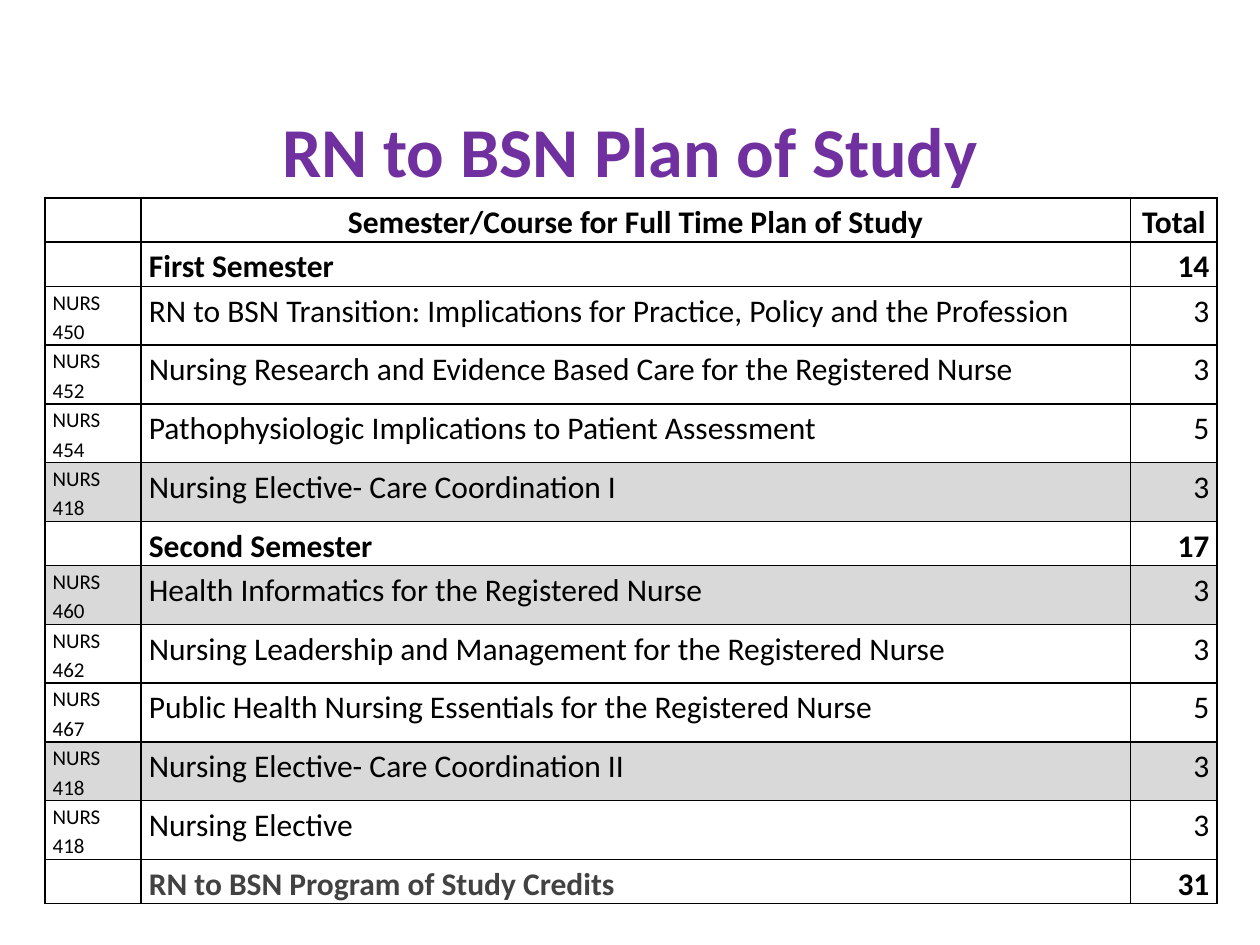
from lxml import etree
from pptx import Presentation
from pptx import util as u
from pptx.dml.color import RGBColor
from pptx.enum import text
from pptx.oxml.ns import qn

BLACK, GREY, SHADE, PURPLE = "000000", "424242", "D9D9D9", "7030A0"
LEFT, CENTER, RIGHT = text.PP_ALIGN.LEFT, text.PP_ALIGN.CENTER, text.PP_ALIGN.RIGHT
COLUMN_WIDTHS = (55, 565.5, 49.5)
HEADING_HEIGHT, COURSE_HEIGHT = 25.2, 33.6

HEADER = ("", "Semester/Course for Full Time Plan of Study", "Total")
PLAN = [
    ("", "First Semester", "14"),
    ("NURS 450", "RN to BSN Transition: Implications for Practice, Policy and the Profession", "3"),
    ("NURS 452", "Nursing Research and Evidence Based Care for the Registered Nurse", "3"),
    ("NURS 454", "Pathophysiologic Implications to Patient Assessment", "5"),
    ("NURS 418", "Nursing Elective- Care Coordination I", "3"),
    ("", "Second Semester", "17"),
    ("NURS 460", "Health Informatics for the Registered Nurse", "3"),
    ("NURS 462", "Nursing Leadership and Management for the Registered Nurse", "3"),
    ("NURS 467", "Public Health Nursing Essentials for the Registered Nurse", "5"),
    ("NURS 418", "Nursing Elective- Care Coordination II", "3"),
    ("NURS 418", "Nursing Elective", "3"),
    ("", "RN to BSN Program of Study Credits", "31"),
]
SHADED_ROWS = {5, 7, 10}


def rgb(value):
    return RGBColor.from_string(value)


def write(frame, content, size=18, color=BLACK, bold=False, align=LEFT, spacing=None):
    paragraph = frame.paragraphs[0]
    paragraph.alignment = align
    paragraph.line_spacing = spacing
    if content:
        run = paragraph.add_run()
        run.text = content
        run.font.name = "Calibri"
        run.font.size = u.Pt(size)
        run.font.bold = bold
        run.font.color.rgb = rgb(color)


def add_borders(cell, color=BLACK, width=1):
    """Draw all four sides; border lines must precede the cell's fill."""
    properties = cell._tc.get_or_add_tcPr()
    for position, side in enumerate(("a:lnL", "a:lnR", "a:lnT", "a:lnB")):
        line = etree.Element(qn(side), w=str(u.Pt(width)))
        fill = etree.SubElement(line, qn("a:solidFill"))
        etree.SubElement(fill, qn("a:srgbClr"), val=color)
        properties.insert(position, line)


def format_cell(cell, shaded):
    cell.margin_left = cell.margin_right = u.Pt(4.5)
    cell.margin_top = cell.margin_bottom = 0
    if shaded:
        cell.fill.solid()
        cell.fill.fore_color.rgb = rgb(SHADE)
    else:
        cell.fill.background()
    add_borders(cell)


def add_plan_table(slide):
    rows = [HEADER, *PLAN]
    heights = [COURSE_HEIGHT if code else HEADING_HEIGHT for code, *_ in rows]
    table = slide.shapes.add_table(
        len(rows), len(COLUMN_WIDTHS), u.Pt(25.6), u.Pt(113.2),
        u.Pt(sum(COLUMN_WIDTHS)), u.Pt(sum(heights))).table
    table.first_row = table.horz_banding = False
    for column, width in zip(table.columns, COLUMN_WIDTHS):
        column.width = u.Pt(width)

    for index, (course, height) in enumerate(zip(rows, heights)):
        table.rows[index].height = u.Pt(height)
        is_header, is_last = index == 0, index == len(rows) - 1
        aligns = (LEFT, CENTER, CENTER) if is_header else (LEFT, LEFT, RIGHT)
        for column, (content, align) in enumerate(zip(course, aligns)):
            cell = table.cell(index, column)
            format_cell(cell, index in SHADED_ROWS)
            write(cell.text_frame, content, size=12 if column == 0 else 18,
                  color=GREY if is_last and column == 1 else BLACK,
                  bold=not course[0], align=align, spacing=1.15)


def add_title(slide):
    title = slide.shapes.title
    title.left, title.top = u.Pt(152), u.Pt(57.6)
    title.width, title.height = u.Pt(416), u.Pt(55.4)
    frame = title.text_frame
    frame.word_wrap = False
    frame.auto_size = text.MSO_AUTO_SIZE.SHAPE_TO_FIT_TEXT
    frame.vertical_anchor = text.MSO_ANCHOR.MIDDLE
    write(frame, "RN to BSN Plan of Study", size=40, color=PURPLE, bold=True, align=CENTER)


def main():
    deck = Presentation()
    deck.slide_width, deck.slide_height = u.Pt(720), u.Pt(540)
    slide = deck.slides.add_slide(deck.slide_layouts[5])
    add_plan_table(slide)
    add_title(slide)
    deck.save("out.pptx")


if __name__ == "__main__":
    main()
